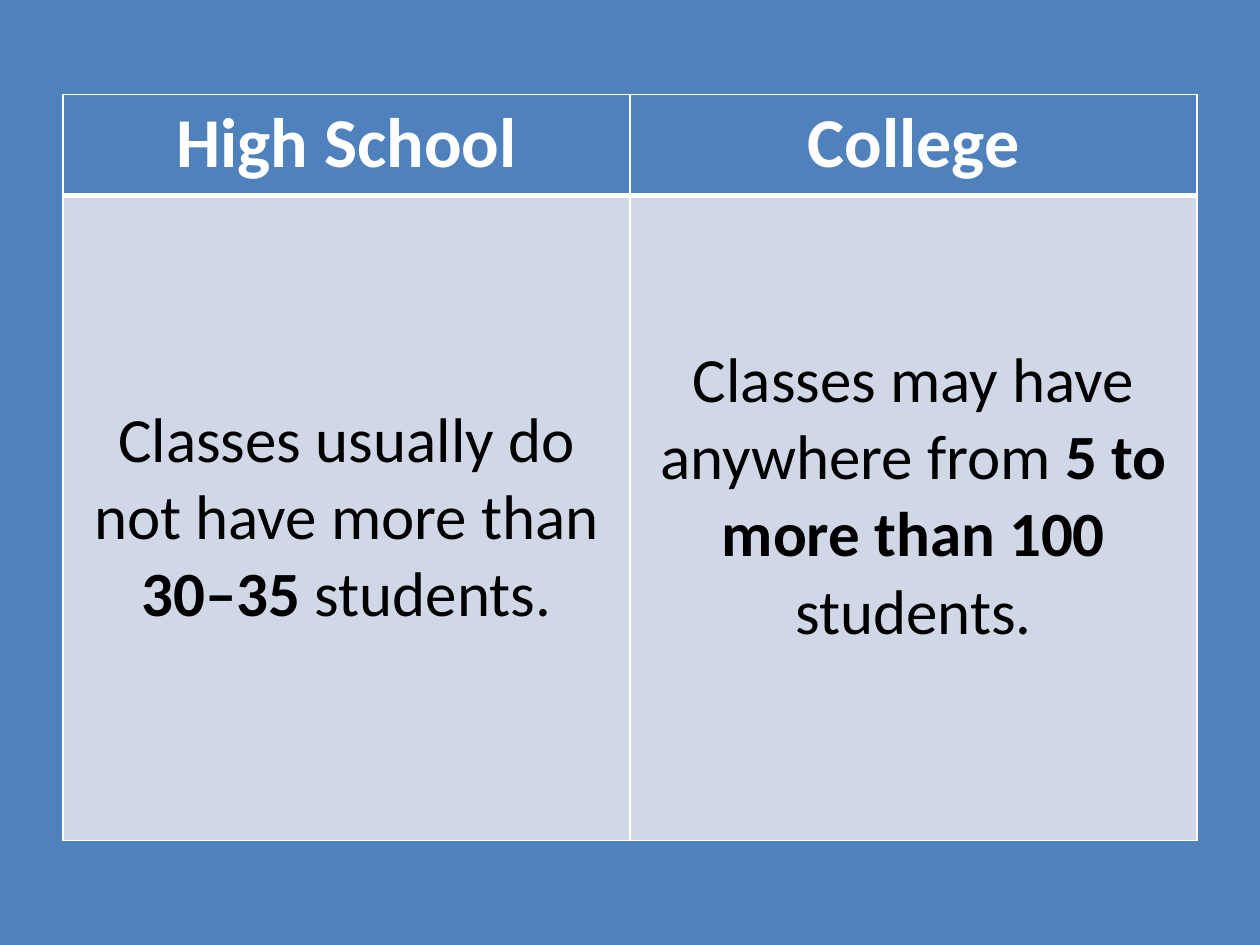
from lxml import etree
from pptx import Presentation
from pptx.dml.color import RGBColor
from pptx.enum.text import MSO_ANCHOR, PP_ALIGN
from pptx.oxml.ns import qn
from pptx.util import Pt

CENTER = PP_ALIGN.CENTER
TOP = MSO_ANCHOR.TOP
MIDDLE = MSO_ANCHOR.MIDDLE
BLANK_LAYOUT = 6
FONT = "Calibri"
COLORS = {"blue": "4F81BD", "pale": "D0D8E8", "white": "FFFFFF", "black": "000000"}
HEADINGS = ["High School", "College"]
CLASS_SIZES = [
    [("Classes usually do not have more than ", False), ("30–35", True), (" students.", False)],
    [("Classes may have anywhere from", False), (" 5 to more than 100 ", True), ("students.", False)],
]
BOTTOM_MARGINS = [3.6, 27.6]


def rgb(name):
    """Return the named colour."""
    return RGBColor.from_string(COLORS[name])


def set_borders(cell, top, bottom):
    """Draw white borders, with the given top and bottom widths."""
    properties = cell._tc.get_or_add_tcPr()
    for side, width in (("L", 1), ("R", 1), ("T", top), ("B", bottom)):
        line = etree.SubElement(properties, qn(f"a:ln{side}"), w=str(Pt(width)))
        fill = etree.SubElement(line, qn("a:solidFill"))
        etree.SubElement(fill, qn("a:srgbClr"), val=COLORS["white"])


def fill_cell(cell, runs, size, color, background, anchor):
    """Write centred runs of (text, bold) on a filled cell."""
    cell.fill.solid()
    cell.fill.fore_color.rgb = rgb(background)
    cell.vertical_anchor = anchor
    paragraph = cell.text_frame.paragraphs[0]
    paragraph.alignment = CENTER
    for text, bold in runs:
        run = paragraph.add_run()
        run.text = text
        run.font.name = FONT
        run.font.size = Pt(size)
        run.font.bold = bold
        run.font.color.rgb = rgb(color)


def add_comparison_table(slide):
    """Add the table that compares class sizes."""
    table = slide.shapes.add_table(2, 2, Pt(36), Pt(54), Pt(648), Pt(426.24)).table
    table.rows[0].height = Pt(57.6)
    table.rows[1].height = Pt(368.64)
    for column, (heading, runs) in enumerate(zip(HEADINGS, CLASS_SIZES)):
        table.columns[column].width = Pt(324)
        header, body = table.cell(0, column), table.cell(1, column)
        set_borders(header, 1, 3)
        fill_cell(header, [(heading, True)], 40, "white", "blue", TOP)
        set_borders(body, 3, 1)
        fill_cell(body, runs, 36, "black", "pale", MIDDLE)
        body.margin_bottom = Pt(BOTTOM_MARGINS[column])


def main():
    """Build and save the slide."""
    presentation = Presentation()
    presentation.slide_width = Pt(720)
    presentation.slide_height = Pt(540)
    slide = presentation.slides.add_slide(presentation.slide_layouts[BLANK_LAYOUT])
    slide.background.fill.solid()
    slide.background.fill.fore_color.rgb = rgb("blue")
    add_comparison_table(slide)
    presentation.save("out.pptx")


if __name__ == "__main__":
    main()
